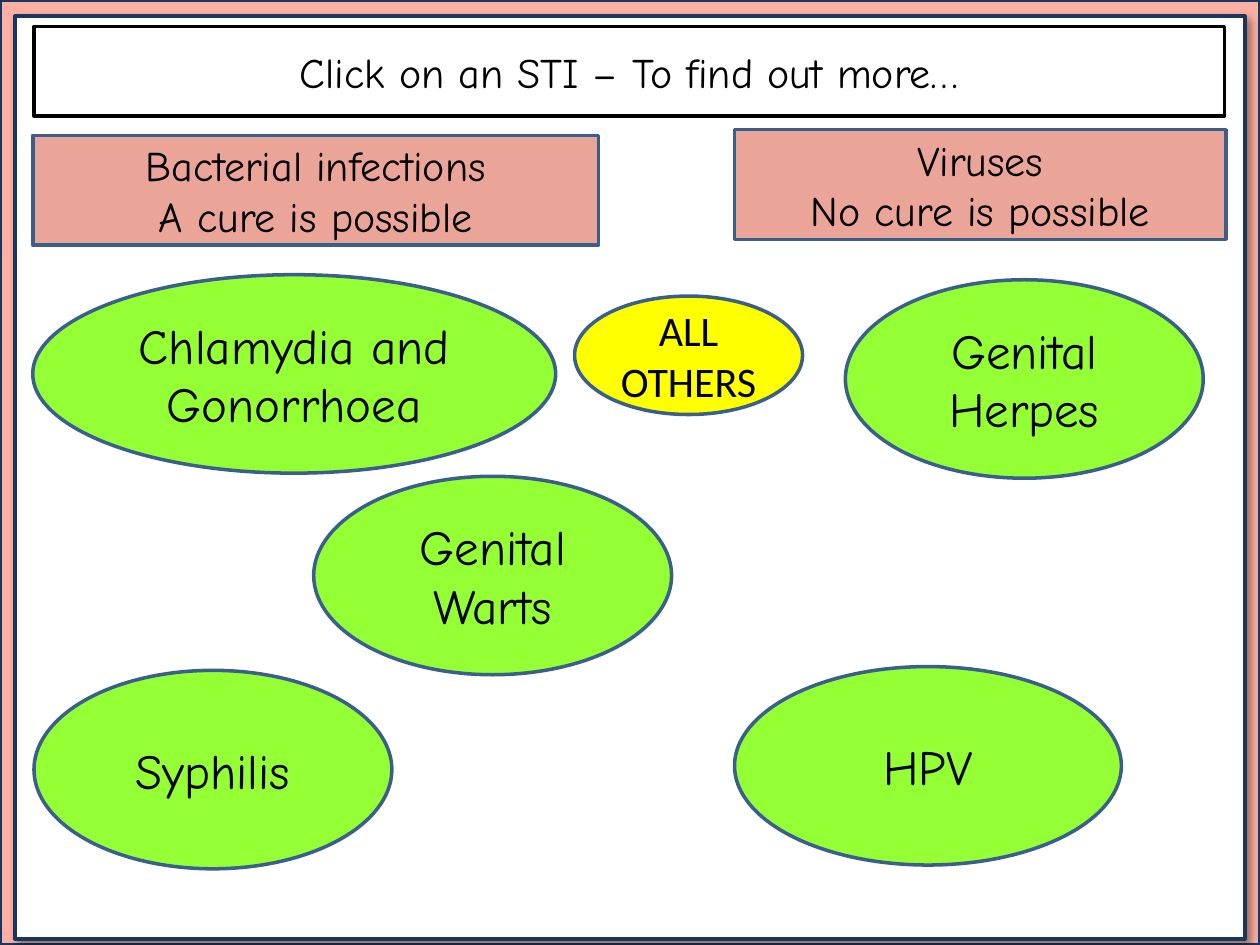
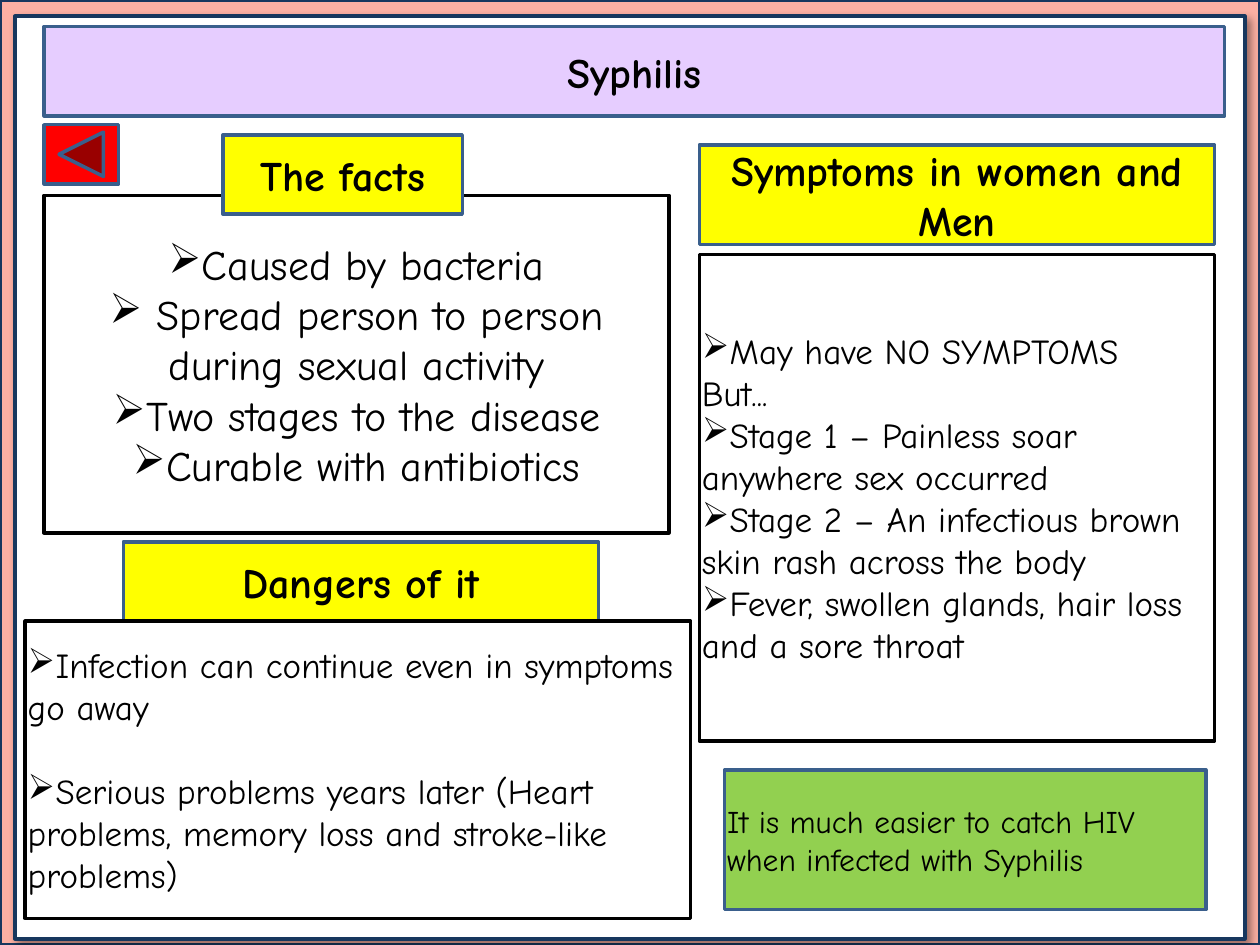
from dataclasses import dataclass

from lxml import etree
from pptx import Presentation
from pptx import util as u
from pptx.dml.color import RGBColor
from pptx.enum import shapes, text
from pptx.oxml import ns

RECTANGLE = shapes.MSO_SHAPE.RECTANGLE
OVAL = shapes.MSO_SHAPE.OVAL
BACK_BUTTON = shapes.MSO_SHAPE.ACTION_BUTTON_BACK_OR_PREVIOUS
LEFT, CENTER = text.PP_ALIGN.LEFT, text.PP_ALIGN.CENTER
ROOMY, TIGHT = (7.2, 3.6), (1.44, 0.72)  # horizontal and vertical insets
BULLET = "➢"


@dataclass(frozen=True)
class Theme:
    font: str = "Comic Neue"
    plain_font: str = "Calibri"
    ink: str = "000000"
    paper: str = "FFFFFF"
    border: str = "FCB0A3"
    navy: str = "17375E"
    blue: str = "3A5F8C"
    lilac: str = "E6CDFF"
    salmon: str = "EBA498"
    lime: str = "94FF34"
    green: str = "92D050"
    yellow: str = "FFFF00"
    red: str = "FF0000"
    oval_size: float = 28
    heading_size: float = 24
    body_size: float = 20
    note_size: float = 18
    line: float = 2
    frame_line: float = 2.25


THEME = Theme()


# Shared building blocks
def add_box(slide, box, fill, line=THEME.blue, kind=RECTANGLE, width=THEME.line):
    shape = slide.shapes.add_shape(kind, *(u.Pt(length) for length in box))
    shape.shadow.inherit = False
    shape.fill.solid()
    shape.fill.fore_color.rgb = RGBColor.from_string(fill)
    shape.line.color.rgb = RGBColor.from_string(line)
    shape.line.width = u.Pt(width)
    return shape


def add_bullet(paragraph):
    properties = paragraph._p.get_or_add_pPr()
    properties.set("marL", "0")
    properties.set("indent", "0")
    etree.SubElement(properties, ns.qn("a:buChar")).set("char", BULLET)


def write(shape, lines, size, align=CENTER, bold=False, font=THEME.font,
          insets=ROOMY, gap=0):
    """Fill a shape with paragraphs; a leading bullet sign makes a bulleted one."""
    frame = shape.text_frame
    frame.word_wrap = True
    frame.vertical_anchor = text.MSO_ANCHOR.MIDDLE
    frame.margin_left = frame.margin_right = u.Pt(insets[0])
    frame.margin_top = frame.margin_bottom = u.Pt(insets[1])
    for index, line in enumerate(lines):
        paragraph = frame.add_paragraph() if index else frame.paragraphs[0]
        paragraph.alignment = align
        if index and gap:
            paragraph.space_before = u.Pt(gap)
        if line.startswith(BULLET):
            add_bullet(paragraph)
        run = paragraph.add_run()
        run.text = line.removeprefix(BULLET)
        run.font.name = font
        run.font.size = u.Pt(size)
        run.font.bold = bold
        run.font.color.rgb = RGBColor.from_string(THEME.ink)


def add_shadow(shape):
    effects = shape._element.spPr.find(ns.qn("a:effectLst"))
    shadow = etree.SubElement(effects, ns.qn("a:outerShdw"), blurRad=str(u.Pt(4)),
                              dist=str(u.Pt(3)), dir="2700000", algn="tl")
    color = etree.SubElement(shadow, ns.qn("a:srgbClr"), val=THEME.ink)
    etree.SubElement(color, ns.qn("a:alpha"), val="40000")


def new_slide(presentation):
    """Blank slide with the pink border and the raised white page."""
    slide = presentation.slides.add_slide(presentation.slide_layouts[6])
    add_box(slide, (0, 0, 720, 540), THEME.border, THEME.navy, width=THEME.frame_line)
    page = add_box(slide, (8.64, 9.36, 702.72, 527.04), THEME.paper, THEME.navy,
                   width=THEME.frame_line)
    add_shadow(page)
    return slide


def title_bar(slide, left, title, fill, line, bold=False):
    bar = add_box(slide, (left, 15.12, 699.84 - left, 51.12), fill, line)
    write(bar, [title], THEME.heading_size, bold=bold)


# Menu regions
def infection_oval(slide, left, top, name, width=204.48):
    oval = add_box(slide, (left, top, width, 113.4), THEME.lime, kind=OVAL)
    write(oval, [name], THEME.oval_size, insets=TIGHT)


def group_banner(slide, left, top, width, lines):
    banner = add_box(slide, (left, top, width, 62.64), THEME.salmon)
    write(banner, lines, THEME.heading_size)


def others_oval(slide, box):
    oval = add_box(slide, box, THEME.yellow, kind=OVAL)
    write(oval, ["ALL OTHERS"], THEME.heading_size, font=THEME.plain_font)


# Detail regions
def panel(slide, box, heading, heading_box, lines, size, align=LEFT, gap=0):
    """Outlined text with a yellow heading, placed relative to the panel's corner."""
    left, top = box[:2]
    across, down, width, height = heading_box

    def add_body():
        body = add_box(slide, box, THEME.paper, THEME.ink)
        write(body, lines, size, align, insets=TIGHT, gap=gap)

    def add_heading():
        label = add_box(slide, (left + across, top + down, width, height), THEME.yellow)
        write(label, [heading], THEME.heading_size, bold=True)

    # A heading that reaches into the body lies in front of it
    overlaps = down + height > 0.01
    for add_part in (add_body, add_heading) if overlaps else (add_heading, add_body):
        add_part()


def note(slide, box, message):
    shape = add_box(slide, box, THEME.green)
    write(shape, [message], THEME.note_size, LEFT, insets=TIGHT)


# Slides
def menu_slide(presentation):
    slide = new_slide(presentation)
    title_bar(slide, 19.44, "Click on an STI – To find out more…", THEME.paper, THEME.ink)
    infection_oval(slide, 18.72, 156.96, "Chlamydia and Gonorrhoea", 298.8)
    infection_oval(slide, 19.44, 383.04, "Syphilis")
    infection_oval(slide, 483.12, 159.84, "Genital Herpes")
    infection_oval(slide, 179.28, 272.16, "Genital Warts")
    infection_oval(slide, 419.76, 380.88, "HPV", 221.04)
    group_banner(slide, 18.72, 77.4, 323.28,
                 ["Bacterial infections", "A cure is possible"])
    group_banner(slide, 419.76, 74.16, 280.8, ["Viruses", "No cure is possible"])
    others_oval(slide, (328.32, 169.2, 130.32, 67.68))


def syphilis_slide(presentation):
    slide = new_slide(presentation)
    title_bar(slide, 25.2, "Syphilis", THEME.lilac, THEME.blue, bold=True)
    panel(slide, (25.2, 111.6, 357.12, 192.96),
          "The facts", (102.24, -34.56, 136.8, 45.36),
          ["➢Caused by bacteria",
           "➢ Spread person to person during sexual activity",
           "➢Two stages to the disease",
           "➢Curable with antibiotics"],
          THEME.heading_size, CENTER)
    panel(slide, (399.6, 145.44, 294.48, 277.92),
          "Symptoms in women and Men", (0, -62.64, 294.48, 56.88),
          ["➢May have NO SYMPTOMS",
           "But...",
           "➢Stage 1 – Painless soar anywhere sex occurred",
           "➢Stage 2 – An infectious brown skin rash across the body",
           "➢Fever, swollen glands, hair loss and a sore throat"],
          THEME.body_size)
    panel(slide, (14.4, 354.96, 380.16, 169.92),
          "Dangers of it", (56.16, -45.36, 271.44, 45.36),
          ["➢Infection can continue even in symptoms go away",
           "➢Serious problems years later (Heart problems, memory loss "
           "and stroke-like problems)"],
          THEME.body_size, gap=24)
    note(slide, (414, 439.92, 275.04, 79.92),
         "It is much easier to catch HIV when infected with Syphilis")
    add_box(slide, (25.2, 71.28, 42.48, 33.84), THEME.red, kind=BACK_BUTTON)


def main():
    presentation = Presentation()
    presentation.slide_width, presentation.slide_height = u.Pt(720), u.Pt(540)
    menu_slide(presentation)
    syphilis_slide(presentation)
    presentation.save("out.pptx")


if __name__ == "__main__":
    main()
